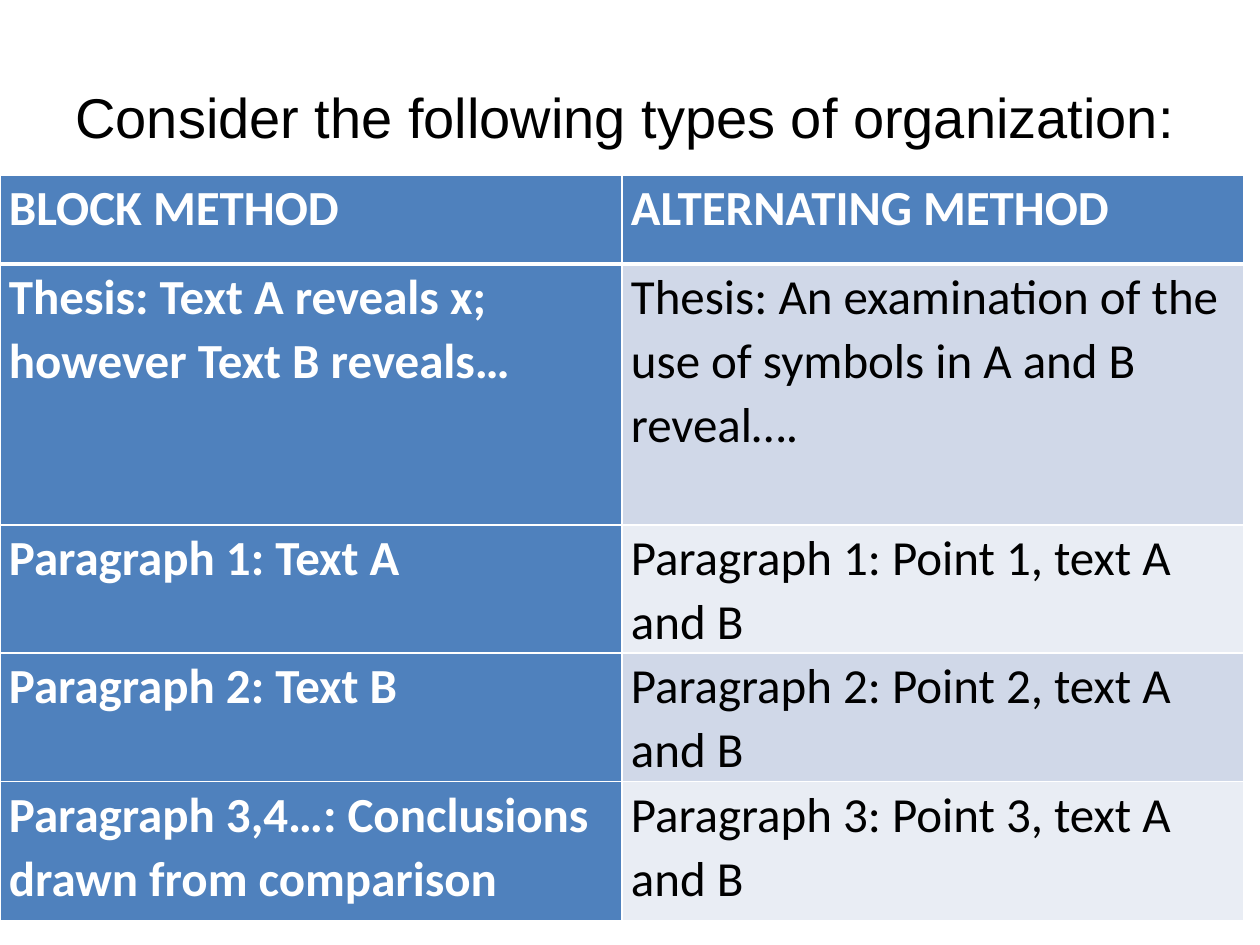
from dataclasses import dataclass

from lxml import etree
from pptx import Presentation
from pptx.dml.color import RGBColor
from pptx.enum import text
from pptx.oxml import ns
from pptx.util import Emu, Pt

EMU_PER_PX = 914400 / 126


@dataclass(frozen=True)
class Theme:
    heading_font: str = "Arial"
    body_font: str = "Calibri"
    heading_size: int = 32
    body_size: int = 28
    line_spacing: float = 1.07
    white: str = "FFFFFF"
    black: str = "000000"
    accent: str = "4F81BD"
    bands: tuple = ("D0D8E8", "E9EDF4")
    rule: int = 1
    header_rule: int = 3


THEME = Theme()
HEADING = "Consider the following types of organization:"
METHODS = [
    ("BLOCK METHOD", "ALTERNATING METHOD"),
    ("Thesis: Text A reveals x; however Text B reveals…",
     "Thesis: An examination of the use of symbols in A and B reveal…."),
    ("Paragraph 1: Text A", "Paragraph 1: Point 1, text A and B"),
    ("Paragraph 2: Text B", "Paragraph 2: Point 2, text A and B"),
    ("Paragraph 3,4…: Conclusions drawn from comparison",
     "Paragraph 3: Point 3, text A and B"),
]
ROW_HEIGHTS = [89, 261, 128, 128, 139]
COLUMN_WIDTH = 622


def px(length):
    return Emu(round(length * EMU_PER_PX))


def apply(target, values):
    for name, value in values.items():
        setattr(target, name, value)


def write(paragraph, words, font, size, color, bold=False):
    run = paragraph.add_run()
    run.text = words
    apply(run.font, {"name": font, "size": Pt(size), "bold": bold})
    run.font.color.rgb = RGBColor.from_string(color)


def add_heading(slide):
    heading = slide.shapes.add_textbox(px(63), px(38), px(1133), px(157))
    frame = heading.text_frame
    apply(frame, {"word_wrap": True, "vertical_anchor": text.MSO_ANCHOR.MIDDLE})
    write(frame.paragraphs[0], HEADING, THEME.heading_font,
          THEME.heading_size, THEME.black)


def add_borders(cell, widths):
    properties = cell._tc.get_or_add_tcPr()
    for side, width in widths.items():
        line = etree.SubElement(properties, ns.qn(f"a:ln{side}"), w=str(Pt(width)))
        fill = etree.SubElement(line, ns.qn("a:solidFill"))
        etree.SubElement(fill, ns.qn("a:srgbClr"), val=THEME.white)


def format_cell(cell, words, row, column):
    emphasized = row == 0 or column == 0
    apply(cell, {"margin_left": px(9), "margin_right": px(9),
                 "margin_top": 0, "margin_bottom": 0})
    add_borders(cell, {
        "L": THEME.rule,
        "R": THEME.rule,
        "T": THEME.header_rule if row == 1 else THEME.rule,
        "B": THEME.header_rule if row == 0 else THEME.rule,
    })
    background = THEME.accent if emphasized else THEME.bands[(row - 1) % 2]
    cell.fill.solid()
    cell.fill.fore_color.rgb = RGBColor.from_string(background)
    paragraph = cell.text_frame.paragraphs[0]
    paragraph.line_spacing = THEME.line_spacing
    write(paragraph, words, THEME.body_font, THEME.body_size,
          THEME.white if emphasized else THEME.black, emphasized)


def add_methods(slide):
    columns = len(METHODS[0])
    table = slide.shapes.add_table(
        len(METHODS), columns, 0, px(175),
        px(COLUMN_WIDTH * columns), px(sum(ROW_HEIGHTS))).table
    apply(table, {"first_row": False, "horz_banding": False})
    for column in table.columns:
        column.width = px(COLUMN_WIDTH)
    for row, (height, entries) in enumerate(zip(ROW_HEIGHTS, METHODS)):
        table.rows[row].height = px(height)
        for column, words in enumerate(entries):
            format_cell(table.cell(row, column), words, row, column)


def main():
    deck = Presentation()
    apply(deck, {"slide_width": px(1260), "slide_height": px(945)})
    slide = deck.slides.add_slide(deck.slide_layouts[6])
    add_methods(slide)
    add_heading(slide)
    deck.save("out.pptx")


if __name__ == "__main__":
    main()
